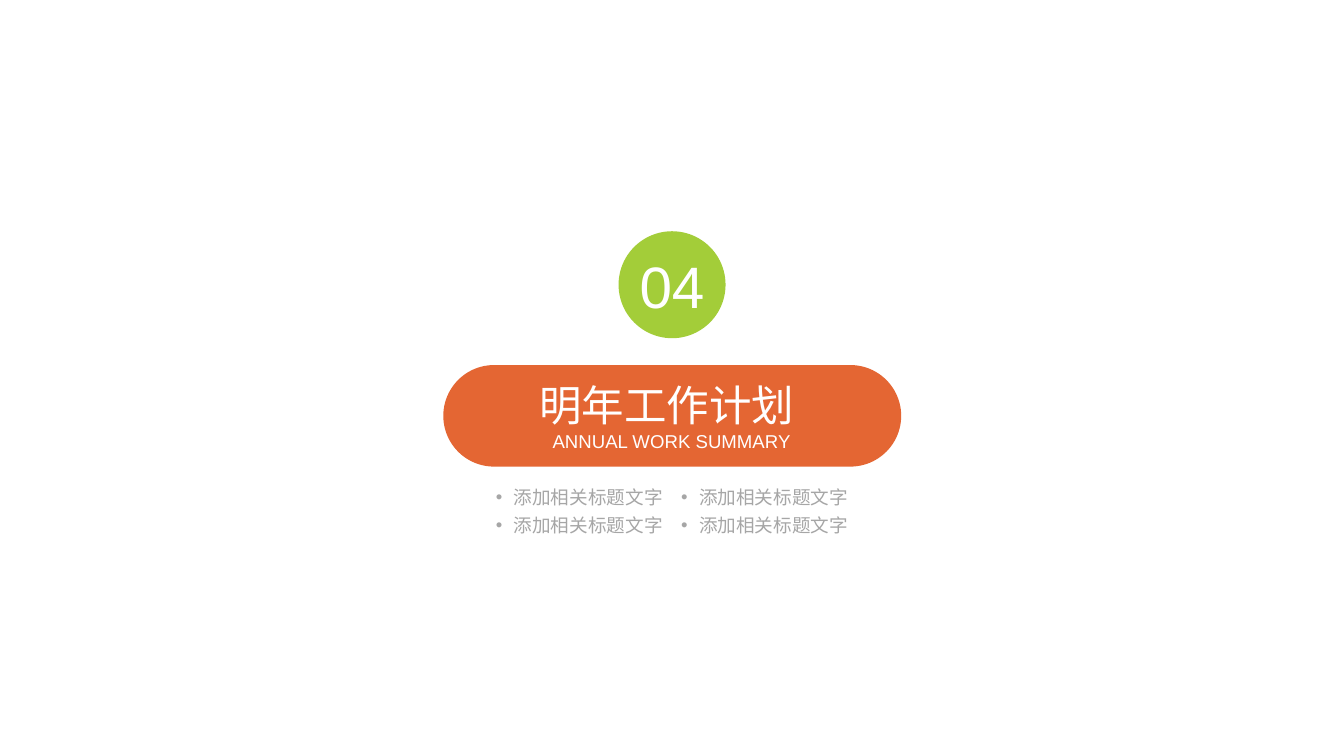
"""Builds the section slide for next year's work plan."""
from dataclasses import dataclass
from itertools import product

from lxml.etree import Element
from pptx import Presentation
from pptx.dml.color import RGBColor as Rgb
from pptx.enum.shapes import MSO_SHAPE as Preset
from pptx.enum.text import MSO_ANCHOR as Anchor, MSO_AUTO_SIZE as AutoSize, PP_ALIGN as Align
from pptx.oxml.ns import qn
from pptx.util import Pt


@dataclass(frozen=True)
class Theme:
    font: str = "Arial"
    white: str = "FFFFFF"
    orange: str = "E46633"
    green: str = "A3CD39"
    grey: str = "A6A6A6"
    number_size: int = 44
    title_size: int = 32
    small_size: int = 14
    bullet_indent: float = 13.5


class SectionSlide:
    def __init__(self, slide, theme):
        self.slide = slide
        self.theme = theme

    def set_lines(self, frame, lines, color):
        frame.margin_left = frame.margin_right = frame.margin_top = frame.margin_bottom = 0
        for position, (text, size) in enumerate(lines):
            paragraph = frame.add_paragraph() if position else frame.paragraphs[0]
            paragraph.text = text
            paragraph.alignment = Align.CENTER
            paragraph.font.name = self.theme.font
            paragraph.font.size = Pt(size)
            paragraph.font.color.rgb = Rgb.from_string(color)

    def panel(self, preset, box, color):
        panel = self.slide.shapes.add_shape(preset, *map(Pt, box))
        panel.shadow.inherit = False
        panel.fill.solid()
        panel.fill.fore_color.rgb = Rgb.from_string(color)
        panel.line.fill.background()
        return panel

    def pill(self, box, color):
        self.panel(Preset.ROUNDED_RECTANGLE, box, color).adjustments[0] = 0.5

    def badge(self, box, number, color):
        frame = self.panel(Preset.OVAL, box, color).text_frame
        frame.vertical_anchor = Anchor.MIDDLE
        self.set_lines(frame, [(number, self.theme.number_size)], self.theme.white)

    def title(self, box, heading, subheading):
        title = self.slide.shapes.title
        title.left, title.top, title.width, title.height = map(Pt, box)
        title.element.getparent().append(title.element)
        frame = title.text_frame
        frame.word_wrap = True
        frame.auto_size = AutoSize.NONE
        frame.vertical_anchor = Anchor.MIDDLE
        lines = [(heading, self.theme.title_size), (subheading, self.theme.small_size)]
        self.set_lines(frame, lines, self.theme.white)

    def bullet(self, box, text):
        frame = self.slide.shapes.add_textbox(*map(Pt, box)).text_frame
        frame.word_wrap = False
        frame.auto_size = AutoSize.SHAPE_TO_FIT_TEXT
        self.set_lines(frame, [(text, self.theme.small_size)], self.theme.grey)
        properties = frame.paragraphs[0]._p.get_or_add_pPr()
        indent = Pt(self.theme.bullet_indent)
        properties.set("marL", str(int(indent)))
        properties.set("indent", str(-int(indent)))
        properties.insert(0, Element(qn("a:buFont"), typeface=self.theme.font))
        properties.insert(1, Element(qn("a:buChar"), char="•"))


def main():
    deck = Presentation()
    deck.slide_width, deck.slide_height = Pt(1012.32), Pt(569.52)
    theme = Theme()
    section = SectionSlide(deck.slides.add_slide(deck.slide_layouts[5]), theme)

    section.pill((333.9, 275, 344.9, 76.5), theme.orange)
    section.badge((465.9, 174.2, 80.6, 80.6), "04", theme.green)
    section.title((406.1, 285.3, 199.6, 55.4), "明年工作计划 ", "ANNUAL WORK SUMMARY")

    for row, column in product(range(2), repeat=2):
        left, top = 373 + column * 139.6, 365.8 + row * 21.4
        section.bullet((left, top, 126.7, 17.3), "添加相关标题文字")

    deck.save("out.pptx")


if __name__ == "__main__":
    main()
